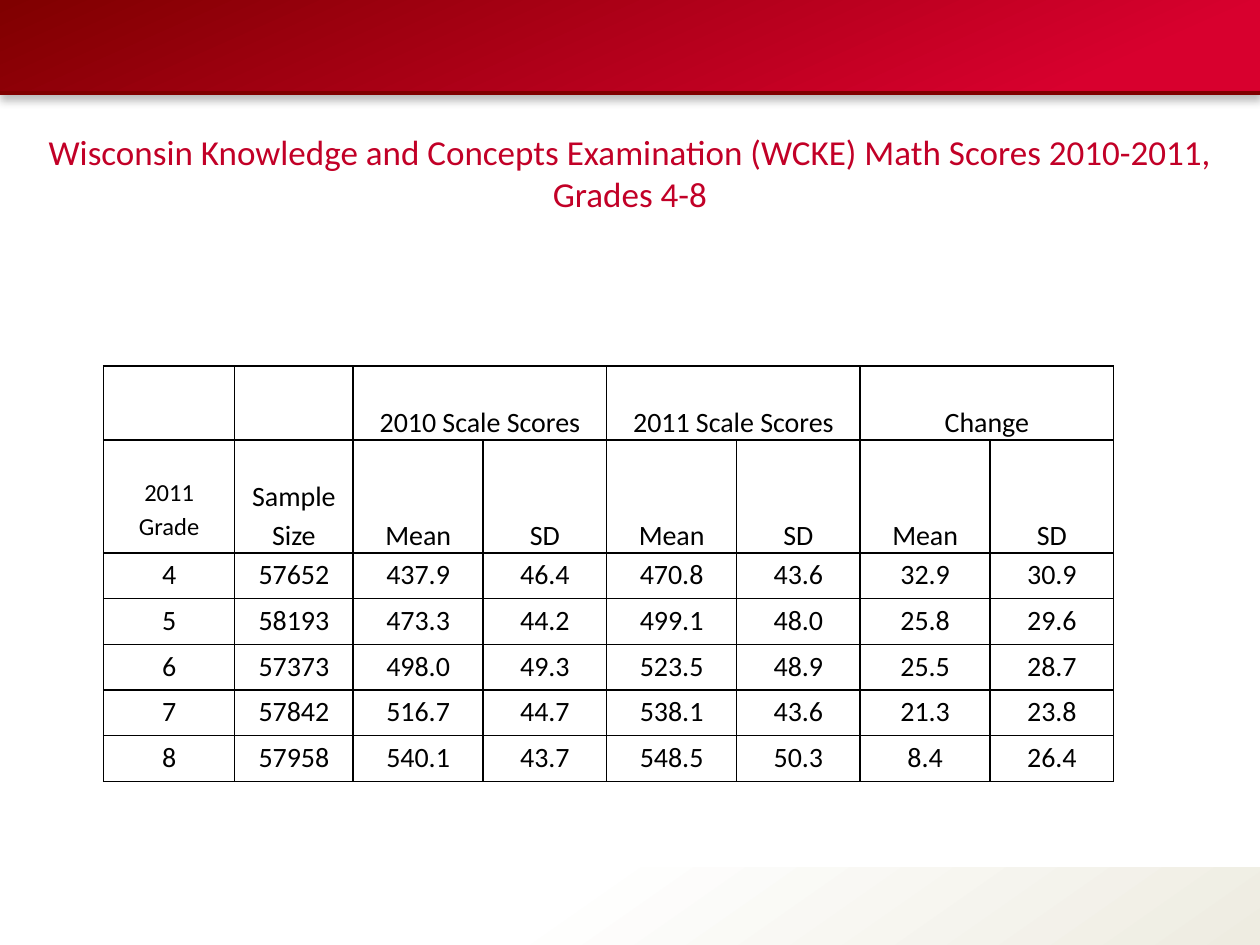
from lxml import etree
from pptx import Presentation
from pptx.dml.color import RGBColor
from pptx.enum.shapes import MSO_CONNECTOR, MSO_SHAPE
from pptx.enum.text import MSO_ANCHOR, PP_ALIGN
from pptx.oxml import parse_xml
from pptx.oxml.ns import nsdecls, qn
from pptx.util import Cm, Pt

RECT, STRAIGHT = MSO_SHAPE.RECTANGLE, MSO_CONNECTOR.STRAIGHT
TOP, BOTTOM = MSO_ANCHOR.TOP, MSO_ANCHOR.BOTTOM
CENTER = PP_ALIGN.CENTER

WHITE = RGBColor(0xFF, 0xFF, 0xFF)
BLACK = RGBColor(0x00, 0x00, 0x00)
BEIGE = RGBColor(0xEE, 0xEC, 0xE1)
MAROON = RGBColor(0x80, 0x00, 0x00)
RED = RGBColor(0xD8, 0x00, 0x2E)
TITLE_RED = RGBColor(0xC2, 0x00, 0x27)

TITLE = ("Wisconsin Knowledge and Concepts Examination (WCKE) "
         "Math Scores 2010-2011, Grades 4-8")
GROUPS = ["2010 Scale Scores", "2011 Scale Scores", "Change"]
HEADINGS = ["2011 Grade", "Sample Size"] + ["Mean", "SD"] * len(GROUPS)
SCORES = [
    ["4", "57652", "437.9", "46.4", "470.8", "43.6", "32.9", "30.9"],
    ["5", "58193", "473.3", "44.2", "499.1", "48.0", "25.8", "29.6"],
    ["6", "57373", "498.0", "49.3", "523.5", "48.9", "25.5", "28.7"],
    ["7", "57842", "516.7", "44.7", "538.1", "43.6", "21.3", "23.8"],
    ["8", "57958", "540.1", "43.7", "548.5", "50.3", "8.4", "26.4"],
]
COL_WIDTHS = [2.64, 2.39] + [2.62, 2.49] * len(GROUPS)
ROW_HEIGHTS = [1.49, 2.28] + [0.92] * len(SCORES)


class SlideBuilder:
    font = "Calibri"

    def __init__(self, slide):
        self.slide = slide

    def style(self, p, size, color):
        p.alignment = CENTER
        p.font.name, p.font.size = self.font, Pt(size)
        p.font.color.rgb = color

    def band(self, top, width, height, stops, angle, shadow=False):
        """Add a full-width gradient bar; angle is clockwise in degrees."""
        sp = self.slide.shapes.add_shape(RECT, 0, Cm(top), Cm(width), Cm(height))
        sp.shadow.inherit = False
        sp.line.fill.background()
        sp.fill.gradient()
        sp.fill.gradient_angle = 360 - angle
        for stop, (position, color) in zip(sp.fill.gradient_stops, stops):
            stop.position, stop.color.rgb = position, color
        if shadow:
            effects = sp._element.spPr.find(qn("a:effectLst"))
            effects.append(parse_xml(
                f'<a:outerShdw {nsdecls("a")} blurRad="{Pt(5)}" dist="{Pt(3.8)}" '
                'dir="5400000" rotWithShape="0"><a:srgbClr val="000000">'
                '<a:alpha val="25000"/></a:srgbClr></a:outerShdw>'))

    def rule(self, y, width, color, weight):
        line = self.slide.shapes.add_connector(STRAIGHT, 0, Cm(y), Cm(width), Cm(y))
        line.line.color.rgb, line.line.width = color, Pt(weight)
        etree.SubElement(line._element.spPr, qn("a:effectLst"))

    def title(self, text, top, width, height):
        tf = self.slide.shapes.add_textbox(0, Cm(top), Cm(width), Cm(height)).text_frame
        tf.word_wrap = True
        tf.text = text
        self.style(tf.paragraphs[0], 20, TITLE_RED)

    def table(self, left, top, col_widths, row_heights):
        table = self.slide.shapes.add_table(
            len(row_heights), len(col_widths), Cm(left), Cm(top),
            Cm(sum(col_widths)), Cm(sum(row_heights))).table
        table.first_row = table.horz_banding = False
        for column, width in zip(table.columns, col_widths):
            column.width = Cm(width)
        for row, height in zip(table.rows, row_heights):
            row.height = Cm(height)
        for cell in table.iter_cells():
            self.border(cell)
            cell.fill.background()
            cell.margin_left = cell.margin_right = Cm(0.18)
            cell.margin_top = cell.margin_bottom = 0
        return table

    def border(self, cell):
        for side in ("lnL", "lnR", "lnT", "lnB"):
            cell._tc.get_or_add_tcPr().append(parse_xml(
                f'<a:{side} {nsdecls("a")} w="{Pt(1)}"><a:solidFill>'
                f'<a:srgbClr val="{BLACK}"/></a:solidFill></a:{side}>'))

    def cell(self, cell, text, anchor, size=16):
        cell.text, cell.vertical_anchor = text, anchor
        p = cell.text_frame.paragraphs[0]
        p.line_spacing = 1.15
        self.style(p, size, BLACK)


def main():
    prs = Presentation()
    prs.slide_width, prs.slide_height = Cm(25.4), Cm(19.05)
    s = SlideBuilder(prs.slides.add_slide(prs.slide_layouts[6]))

    s.band(17.48, 25.4, 1.57, [(0.43, WHITE), (1, BEIGE)], 55)
    s.band(0, 25.43, 1.88, [(0, MAROON), (0.87, RED)], 66, shadow=True)
    s.rule(1.88, 25.43, MAROON, 2)

    table = s.table(2.09, 7.38, COL_WIDTHS, ROW_HEIGHTS)
    for i, group in enumerate(GROUPS):
        col = 2 + 2 * i
        table.cell(0, col).merge(table.cell(0, col + 1))
        s.cell(table.cell(0, col), group, BOTTOM)
    for col, heading in enumerate(HEADINGS):
        s.cell(table.cell(1, col), heading, BOTTOM, 16 if col else 14)
    table.cell(1, 0).margin_bottom = Cm(0.22)
    for row, values in enumerate(SCORES, start=2):
        for col, value in enumerate(values):
            s.cell(table.cell(row, col), value, TOP)

    s.title(TITLE, 2.51, 25.4, 2.74)
    prs.save("out.pptx")


if __name__ == "__main__":
    main()
